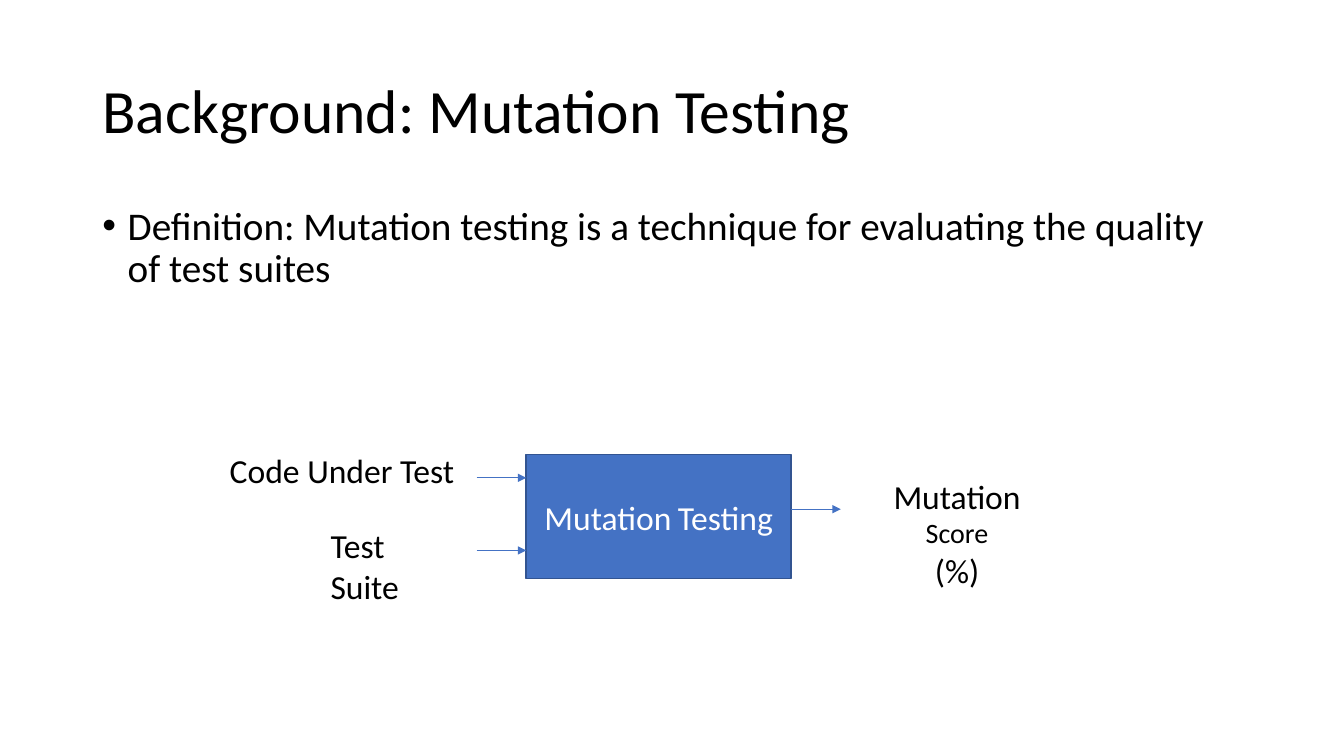
from lxml.etree import SubElement
from pptx import Presentation
from pptx.dml.color import RGBColor
from pptx.enum.shapes import MSO_CONNECTOR as Link, MSO_SHAPE as Shape
from pptx.enum.text import MSO_ANCHOR as Anchor, MSO_AUTO_SIZE as Fit, PP_ALIGN as Align
from pptx.oxml.ns import qn
from pptx.util import Cm, Pt

BLUE, EDGE, BLACK, WHITE = "4472C4", "325491", "000000", "FFFFFF"


def color(code):
    return RGBColor.from_string(code)


def write(para, runs, size, ink=BLACK):
    """Fill a paragraph with (text, size) runs; a size of None keeps the common one."""
    font = para.font
    font.name, font.size = "Calibri", Pt(size)
    font.color.rgb = color(ink)
    for text, own in runs:
        if text == "\n":
            para.add_line_break()
            continue
        run = para.add_run()
        run.text = text
        if own:
            run.font.size = Pt(own)


def label(slide, box, runs, size=24, align=Align.LEFT, fit=Fit.SHAPE_TO_FIT_TEXT):
    frame = slide.shapes.add_textbox(*map(Cm, box)).text_frame
    frame.word_wrap = True
    frame.auto_size = fit
    para = frame.paragraphs[0]
    para.alignment = align
    write(para, runs, size)
    return frame


def title(slide, box, text):
    frame = label(slide, box, [(text, None)], 44, fit=Fit.NONE)
    frame.vertical_anchor = Anchor.MIDDLE
    frame.paragraphs[0].line_spacing = 0.9


def body(slide, box, text):
    frame = label(slide, box, [], fit=Fit.NONE)
    para = frame.paragraphs[0]
    para.line_spacing, para.space_before = 0.9, Pt(10)
    # Hanging bullet
    props = para.font._element.getparent()
    props.set("marL", str(Cm(0.64)))
    props.set("indent", str(-Cm(0.64)))
    mark = SubElement(props, qn("a:buFont"))
    mark.set("typeface", "Arial")
    dot = SubElement(props, qn("a:buChar"))
    dot.set("char", "•")
    # The default font comes last in the paragraph properties
    props.append(props.find(qn("a:defRPr")))
    write(para, [(text, None)], 28)


def arrow(slide, left, top, width):
    line = slide.shapes.add_connector(
        Link.STRAIGHT, Cm(left), Cm(top), Cm(left + width), Cm(top))
    line.line.color.rgb = color(BLUE)
    line.line.width = Pt(0.5)
    SubElement(line.line._get_or_add_ln(), qn("a:tailEnd")).set("type", "triangle")
    SubElement(line._element.spPr, qn("a:effectLst"))


def flow(slide, box):
    """Draw the process box with its two inputs and one output."""
    left, top, width, height = box
    gap = 1.25
    right = left + width

    # Process
    rect = slide.shapes.add_shape(Shape.RECTANGLE, *map(Cm, box))
    rect.shadow.inherit = False
    rect.fill.solid()
    rect.fill.fore_color.rgb = color(BLUE)
    rect.line.color.rgb = color(EDGE)
    rect.line.width = Pt(1)
    frame = rect.text_frame
    frame.word_wrap = True
    frame.vertical_anchor = Anchor.MIDDLE
    para = frame.paragraphs[0]
    para.alignment = Align.CENTER
    write(para, [("Mutation", None), (" ", 20), ("Testing", None)], 24, WHITE)

    # Arrows in and out
    for x, y in ((left - gap, 0.58), (left - gap, 2.41), (right, 1.37)):
        arrow(slide, x, top + y, gap)

    # Inputs
    label(slide, (left - 7.72, top - 0.25, 6.6, 1.28), [("Code Under Test", None)])
    label(slide, (left - 5.18, top + 1.65, 3.73, 1.28),
          [("Test", None), (" ", 20), ("Suite", None)])

    # Output
    label(slide, (right + 1.55, top + 0.4, 5.26, 2.31),
          [("Mutation", None), (" Score", 20), ("\n", None), ("(%)", None)],
          align=Align.CENTER)


def main():
    deck = Presentation()
    deck.slide_width, deck.slide_height = Cm(33.87), Cm(19.05)
    slide = deck.slides.add_slide(deck.slide_layouts[6])
    left, width = 2.33, 29.21
    title(slide, (left, 1.01, width, 3.68), "Background: Mutation Testing")
    body(slide, (left, 5.07, width, 12.09),
         "Definition: Mutation testing is a technique for evaluating "
         "the quality of test suites")
    flow(slide, (13.26, 11.46, 6.68, 3.12))
    deck.save("out.pptx")


if __name__ == "__main__":
    main()
